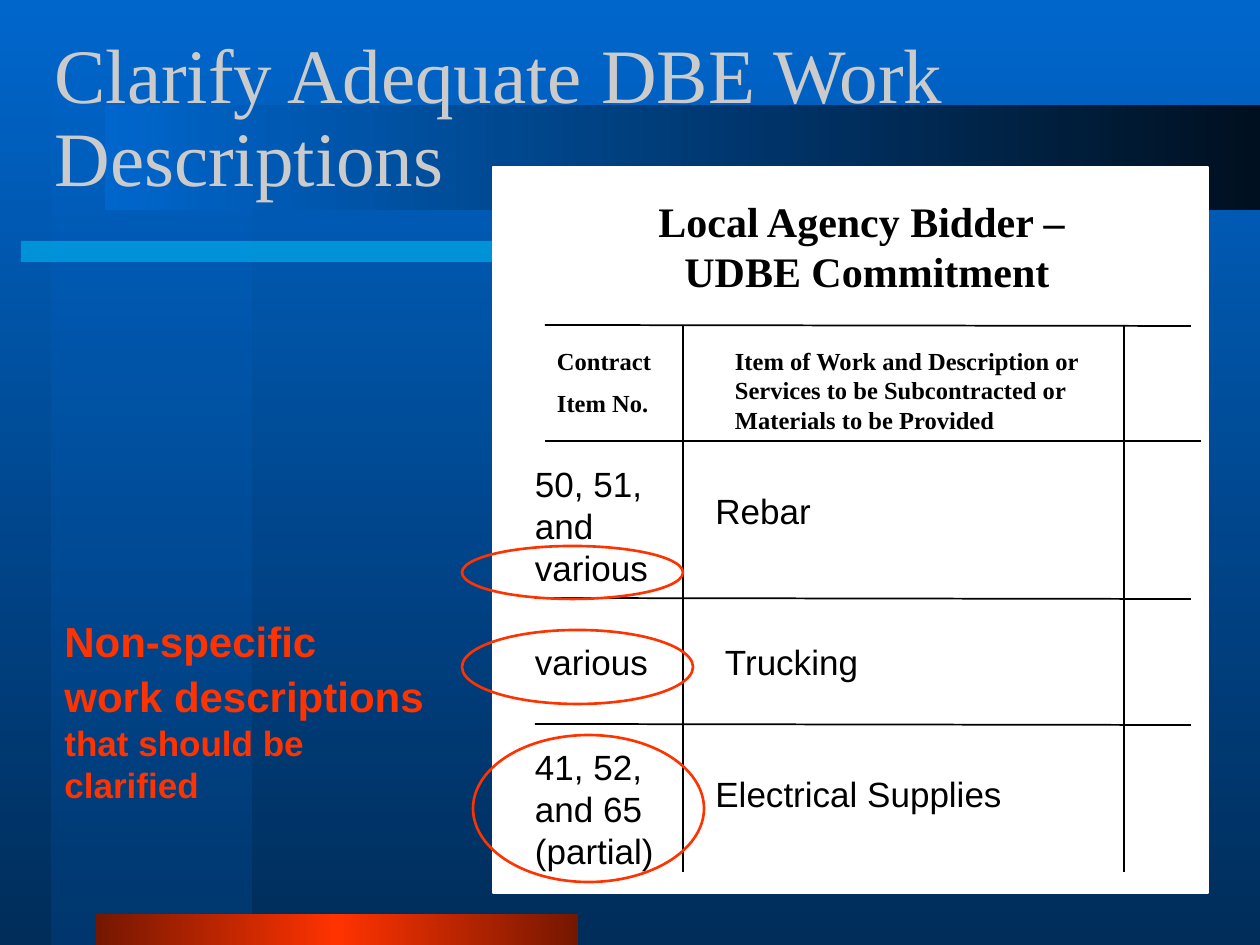
from lxml import etree
from pptx import Presentation
from pptx.dml.color import RGBColor
from pptx.enum.shapes import MSO_CONNECTOR, MSO_SHAPE
from pptx.enum.text import PP_ALIGN
from pptx.oxml.ns import qn
from pptx.util import Pt

EMU_PER_PX = 914400 / 126
RECTANGLE, OVAL = MSO_SHAPE.RECTANGLE, MSO_SHAPE.OVAL
STRAIGHT = MSO_CONNECTOR.STRAIGHT
CENTER = PP_ALIGN.CENTER

BLUE = RGBColor(0x00, 0x66, 0xCC)
MID_BLUE = RGBColor(0x00, 0x40, 0x80)
NAVY = RGBColor(0x00, 0x2D, 0x5A)
NIGHT = RGBColor(0x00, 0x10, 0x20)
CYAN = RGBColor(0x00, 0xCC, 0xFF)
RED = RGBColor(0xFF, 0x33, 0x00)
DARK_RED = RGBColor(0x75, 0x17, 0x00)
WHITE = RGBColor(0xFF, 0xFF, 0xFF)
BLACK = RGBColor(0x00, 0x00, 0x00)
GREY = RGBColor(0xCB, 0xCB, 0xCB)

BACKGROUND = [(0, BLUE), (100, NAVY)]
DECORATIONS = [
    ((52, 0, 200, 945), [(0, BLUE), (100, MID_BLUE)], 90, 50),
    ((21, 241, 651, 21), [(0, CYAN), (100, CYAN)], 0, 50),
    ((96, 914, 482, 31), [(0, DARK_RED), (50, RED), (100, DARK_RED)], 0, 100),
    ((105, 105, 1155, 105), [(0, BLUE), (100, NIGHT)], 0, 100),
]
FORM = (493, 167, 715, 726)
RULES = [
    (545, 325, 1191, 326),
    (545, 441, 1201, 441),
    (535, 598, 1191, 599),
    (535, 724, 1191, 725),
    (683, 325, 683, 872),
    (1124, 325, 1124, 872),
]
CIRCLES = [(462, 546, 221, 53), (462, 630, 231, 74), (473, 735, 231, 147)]

SERIF, SANS = "Times New Roman", "Arial"
HEADING = {"name": SERIF, "size": Pt(24), "bold": True}
COLUMN = {"name": SERIF, "size": Pt(14), "bold": True}
ENTRY = {"name": SANS, "size": Pt(20)}
TITLE = {"name": SERIF, "size": Pt(44)}
CALLOUT = {"name": SANS, "size": Pt(24), "bold": True}
CALLOUT_END = {"name": SANS, "size": Pt(20), "bold": True}

FORM_TEXTS = [
    ((557, 346, 105, 74), 0, COLUMN, ["Contract", "Item No."], {"space_before": Pt(7)}),
    ((735, 346, 368, 88), 0, COLUMN,
     ["Item of Work and Description or Services to be Subcontracted or Materials to be Provided"], {}),
    ((557, 189, 620, 113), 1, HEADING,
     ["Local Agency Bidder – ", "UDBE Commitment"], {"alignment": CENTER}),
    ((535, 462, 126, 126), 0, ENTRY, ["50, 51, and various"], {}),
    ((703, 483, 378, 54), 1, ENTRY, ["Rebar"], {}),
    ((535, 640, 126, 42), 0, ENTRY, ["various"], {}),
    ((725, 640, 210, 42), 0, ENTRY, ["Trucking"], {}),
    ((535, 745, 136, 126), 0, ENTRY, ["41, 52, and 65 (partial)"], {}),
    ((703, 766, 325, 54), 1, ENTRY, ["Electrical Supplies"], {}),
]
TITLE_BOX = (42, 31, 1218, 180)
TITLE_TEXT = "Clarify Adequate DBE Work Descriptions"
CALLOUT_BOX = (52, 609, 399, 204)
CALLOUT_LINES = [
    [("Non-specific", CALLOUT)],
    [("work descriptions ", CALLOUT), ("that should be clarified", CALLOUT_END)],
]


def emu(lengths):
    return [round(length * EMU_PER_PX) for length in lengths]


def set_gradient(fill, parent, stops, angle, opacity=100):
    fill.gradient()
    fill.gradient_angle = -angle % 360
    stop_list = parent.find(".//" + qn("a:gsLst"))
    for stop in list(stop_list):
        stop_list.remove(stop)
    for position, color in stops:
        stop = etree.SubElement(stop_list, qn("a:gs"), pos=str(position * 1000))
        color_node = etree.SubElement(stop, qn("a:srgbClr"), val=str(color))
        if opacity < 100:
            etree.SubElement(color_node, qn("a:alpha"), val=str(opacity * 1000))


def add_shape(page, kind, place):
    shape = page.shapes.add_shape(kind, *emu(place))
    shape.shadow.inherit = False
    return shape


def add_rule(page, ends):
    rule = page.shapes.add_connector(STRAIGHT, *emu(ends))
    rule.line.color.rgb = BLACK
    rule.line.width = Pt(1)
    etree.SubElement(rule.element.spPr, qn("a:effectLst"))


def add_circle(page, place):
    circle = add_shape(page, OVAL, place)
    circle.fill.background()
    circle.line.color.rgb = RED
    circle.line.width = Pt(1.5)


def add_text(page, place, padded, paragraphs, color, layout):
    box = page.shapes.add_textbox(*emu(place))
    frame = box.text_frame
    frame.word_wrap = True
    if not padded:
        for side in ("left", "top", "right", "bottom"):
            setattr(frame, "margin_" + side, 0)
    for index, spans in enumerate(paragraphs):
        para = frame.paragraphs[0] if index == 0 else frame.add_paragraph()
        for name, value in layout.items():
            if index or name != "space_before":
                setattr(para, name, value)
        for text, style in spans:
            span = para.add_run()
            span.text = text
            span.font.color.rgb = color
            for name, value in style.items():
                setattr(span.font, name, value)


def main():
    deck = Presentation()
    deck.slide_width, deck.slide_height = emu((1260, 945))
    page = deck.slides.add_slide(deck.slide_layouts[6])
    set_gradient(page.background.fill, page.element, BACKGROUND, 90)

    for place, stops, angle, opacity in DECORATIONS:
        block = add_shape(page, RECTANGLE, place)
        set_gradient(block.fill, block.element, stops, angle, opacity)
        block.line.fill.background()

    form = add_shape(page, RECTANGLE, FORM)
    form.fill.solid()
    form.fill.fore_color.rgb = WHITE
    form.line.color.rgb = WHITE
    form.line.width = Pt(1)

    for ends in RULES:
        add_rule(page, ends)
    for place, padded, style, lines, layout in FORM_TEXTS:
        add_text(page, place, padded, [[(line, style)] for line in lines], BLACK, layout)
    for place in CIRCLES:
        add_circle(page, place)

    add_text(page, TITLE_BOX, 1, [[(TITLE_TEXT, TITLE)]], GREY, {"line_spacing": 0.9})
    add_text(page, CALLOUT_BOX, 1, CALLOUT_LINES, RED, {"space_before": Pt(3)})
    deck.save("out.pptx")


if __name__ == "__main__":
    main()
